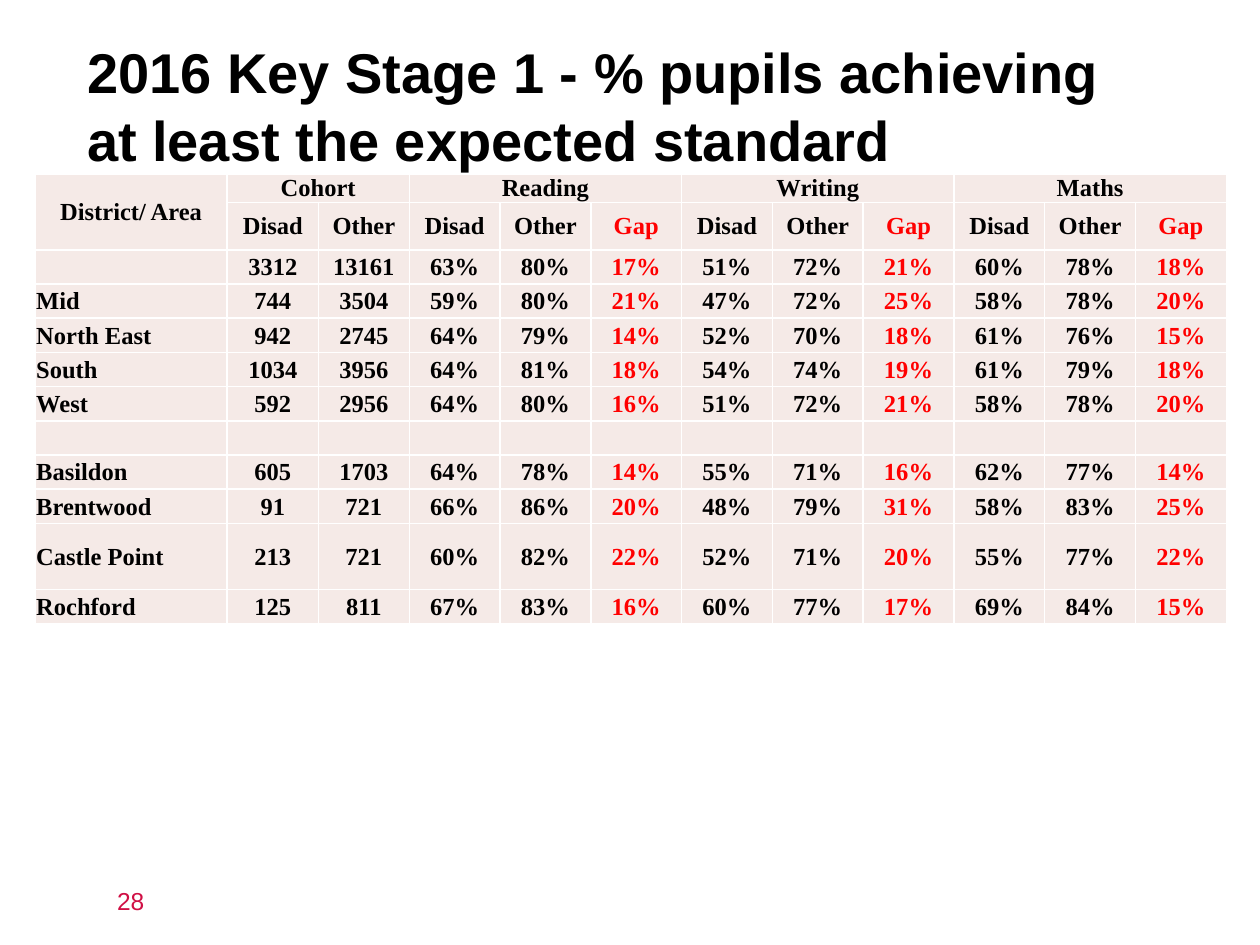
from pptx import Presentation
from pptx.dml.color import RGBColor as RGB
from pptx.enum.text import MSO_ANCHOR as Anchor, MSO_AUTO_SIZE as Fit, PP_ALIGN as Align
from pptx.oxml import parse_xml
from pptx.oxml.ns import nsdecls
from pptx.util import Cm, Pt

TITLE = "2016 Key Stage 1 - % pupils achieving at least the expected standard"
PAGE = "28"
AREA = "District/ Area"
GROUPS = [("Cohort", 2), ("Reading", 3), ("Writing", 3), ("Maths", 3)]
HEADS = ["Disad", "Other", "Gap"]
ROWS = [
    ("", 3312, 13161, 63, 80, 17, 51, 72, 21, 60, 78, 18),
    ("Mid", 744, 3504, 59, 80, 21, 47, 72, 25, 58, 78, 20),
    ("North East", 942, 2745, 64, 79, 14, 52, 70, 18, 61, 76, 15),
    ("South", 1034, 3956, 64, 81, 18, 54, 74, 19, 61, 79, 18),
    ("West", 592, 2956, 64, 80, 16, 51, 72, 21, 58, 78, 20),
    ("",) * 12,
    ("Basildon", 605, 1703, 64, 78, 14, 55, 71, 16, 62, 77, 14),
    ("Brentwood", 91, 721, 66, 86, 20, 48, 79, 31, 58, 83, 25),
    ("Castle Point", 213, 721, 60, 82, 22, 52, 71, 20, 55, 77, 22),
    ("Rochford", 125, 811, 67, 83, 16, 60, 77, 17, 69, 84, 15),
]
COLORS = {"ink": "000000", "gap": "FF0000", "page": "D00F44", "fill": "F5EAE7", "rule": "FFFFFF"}
WIDTHS = [3.87, 1.84] + [1.83] * 10
TALL = {"Castle Point": 1.33}
HEIGHTS = [0.56, 0.96] + [TALL.get(row[0], 0.69) for row in ROWS]
CELL = {"margin_left": Cm(0.02), "margin_right": Cm(0.02), "margin_top": Cm(0.02),
        "margin_bottom": 0, "vertical_anchor": Anchor.MIDDLE}


def apply(item, values):
    """Set each attribute of an item from a dict."""
    for name, value in values.items():
        setattr(item, name, value)


def write(para, text, face, size, color, bold=False):
    """Add one formatted run to a paragraph."""
    run = para.add_run()
    run.text = text
    apply(run.font, {"name": face, "size": Pt(size), "bold": bold})
    run.font.color.rgb = RGB.from_string(COLORS[color])


def edge(cell):
    """Draw the four borders of a cell."""
    props = cell._tc.get_or_add_tcPr()
    for spot, side in enumerate(("lnL", "lnR", "lnT", "lnB")):
        props.insert(spot, parse_xml(
            f'<a:{side} {nsdecls("a")} w="12700"><a:solidFill>'
            f'<a:srgbClr val="{COLORS["rule"]}"/></a:solidFill></a:{side}>'))


def build_grid():
    """Return all table rows as text."""
    top, sub = [AREA], [""]
    for name, count in GROUPS:
        top += [name] + [""] * (count - 1)
        sub += HEADS[:count]
    body = [[f"{v}%" if c > 2 and v != "" else str(v) for c, v in enumerate(row)] for row in ROWS]
    return [top, sub] + body


def add_grid(slide):
    """Add the results table."""
    grid = build_grid()
    table = slide.shapes.add_table(len(grid), len(WIDTHS), Cm(0.71), Cm(3.51),
                                   Cm(sum(WIDTHS)), Cm(sum(HEIGHTS))).table
    for col, width in zip(table.columns, WIDTHS):
        col.width = Cm(width)
    for row, height in zip(table.rows, HEIGHTS):
        row.height = Cm(height)
    for r, line in enumerate(grid):
        for c, text in enumerate(line):
            cell = table.cell(r, c)
            apply(cell, CELL)
            cell.fill.solid()
            cell.fill.fore_color.rgb = RGB.from_string(COLORS["fill"])
            edge(cell)
            para = cell.text_frame.paragraphs[0]
            para.alignment = Align.LEFT if c == 0 and r > 1 else Align.CENTER
            if text:
                color = "gap" if r and grid[1][c] == "Gap" else "ink"
                write(para, text, "Times New Roman", 14, color, True)
            else:
                para._p.get_or_add_endParaRPr().set("sz", "1400")
    table.cell(0, 0).merge(table.cell(1, 0))
    start = 1
    for _, count in GROUPS:
        table.cell(0, start).merge(table.cell(0, start + count - 1))
        start += count


def main():
    """Build and save the slide."""
    deck = Presentation()
    apply(deck, {"slide_width": Cm(25.4), "slide_height": Cm(19.05)})
    slide = deck.slides.add_slide(deck.slide_layouts[5])
    title = slide.shapes.title
    apply(title, {"left": Cm(1.5), "top": Cm(0.53), "width": Cm(21.8), "height": Cm(3.18)})
    apply(title.text_frame, {"word_wrap": True, "auto_size": Fit.NONE,
                             "vertical_anchor": Anchor.MIDDLE})
    para = title.text_frame.paragraphs[0]
    para.alignment = Align.LEFT
    write(para, TITLE, "Arial", 32, "ink", True)
    add_grid(slide)
    page = slide.shapes.add_textbox(Cm(2.11), Cm(17.73), Cm(5.28), Cm(0.84)).text_frame
    page.word_wrap = True
    write(page.paragraphs[0], PAGE, "Arial", 14, "page")
    deck.save("out.pptx")


if __name__ == "__main__":
    main()
